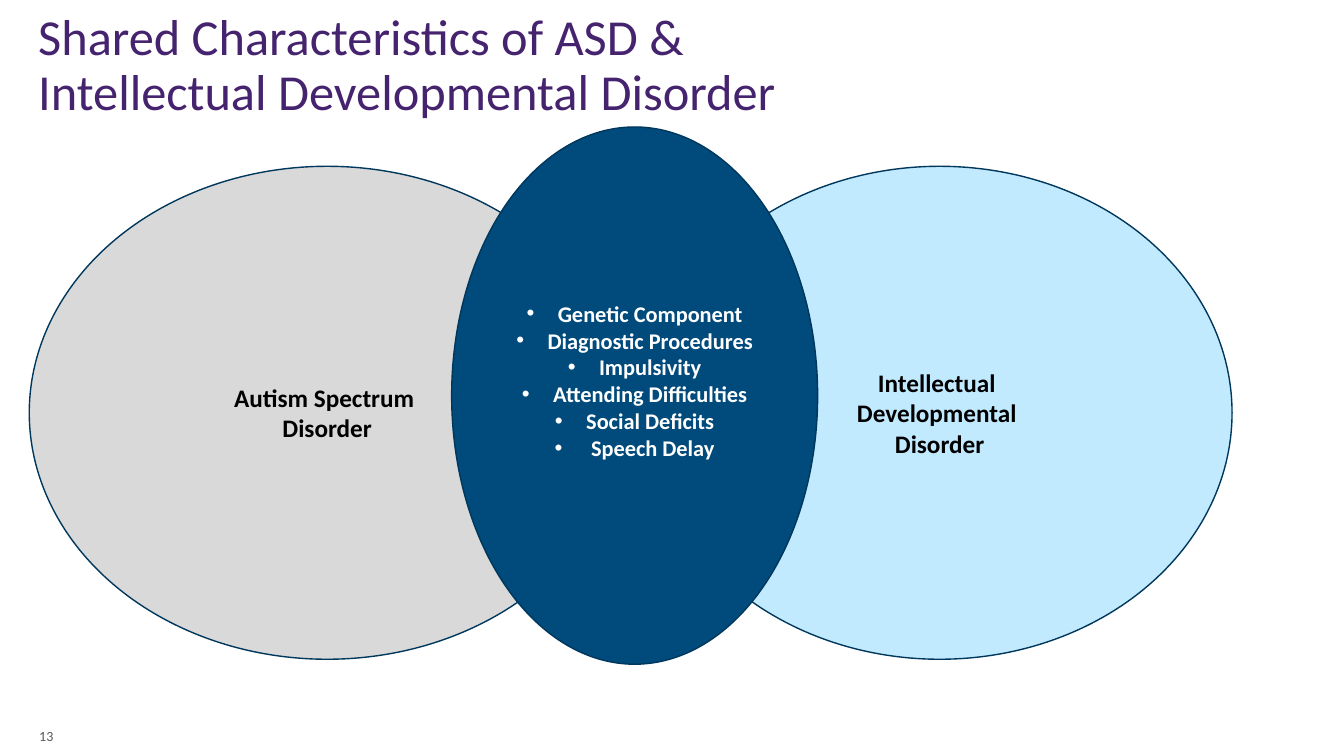
from dataclasses import dataclass

from lxml.etree import SubElement
from pptx import Presentation
from pptx.dml.color import RGBColor
from pptx.enum.shapes import MSO_SHAPE as Preset
from pptx.enum.text import MSO_ANCHOR as Anchor, PP_ALIGN as Align
from pptx.oxml.ns import qn
from pptx.slide import Slide
from pptx.util import Emu, Pt

PX = 9144  # 100 px to the inch
FONT = "Calibri"

PURPLE = RGBColor(0x45, 0x23, 0x6E)
DARK_GRAY = RGBColor(0x59, 0x59, 0x59)
LIGHT_GRAY = RGBColor(0xD9, 0xD9, 0xD9)
LIGHT_BLUE = RGBColor(0xC2, 0xEA, 0xFF)
DEEP_BLUE = RGBColor(0x00, 0x4A, 0x7C)
OUTLINE = RGBColor(0x00, 0x37, 0x5C)
BLACK = RGBColor(0x00, 0x00, 0x00)
WHITE = RGBColor(0xFF, 0xFF, 0xFF)


def px(length: int) -> Emu:
    return Emu(length * PX)


@dataclass(frozen=True)
class Box:
    left: int
    top: int
    width: int
    height: int

    def emu(self) -> tuple[Emu, Emu, Emu, Emu]:
        return px(self.left), px(self.top), px(self.width), px(self.height)


@dataclass(frozen=True)
class Label:
    box: Box
    text: str
    size: int
    color: RGBColor
    anchor: Anchor
    line_spacing: float = 1.0


@dataclass(frozen=True)
class Oval:
    box: Box
    fill: RGBColor
    lines: tuple[str, ...]
    size: int
    color: RGBColor
    bulleted: bool = False
    bottom_inset: int = 5


LABELS = (
    Label(Box(28, 7, 792, 118),
          "Shared Characteristics of ASD & Intellectual Developmental Disorder",
          36, PURPLE, Anchor.MIDDLE, 0.9),
    Label(Box(29, 703, 59, 40), "13", 10, DARK_GRAY, Anchor.BOTTOM),
)

OVALS = (
    Oval(Box(29, 165, 591, 489), LIGHT_GRAY,
         ("Autism Spectrum ", "Disorder"), 18, BLACK),
    Oval(Box(642, 165, 580, 489), LIGHT_BLUE,
         ("Intellectual ", "Developmental ", "Disorder"), 18, BLACK),
    Oval(Box(448, 126, 363, 533), DEEP_BLUE,
         ("Genetic Component", "Diagnostic Procedures", "Impulsivity",
          "Attending Difficulties", "Social Deficits", " Speech Delay"),
         16, WHITE, bulleted=True, bottom_inset=35),
)


def add_bullet(paragraph) -> None:
    properties = paragraph._p.get_or_add_pPr()
    properties.set("marL", str(px(31)))
    properties.set("indent", str(px(-31)))
    SubElement(properties, qn("a:buFont"), typeface="Arial")
    SubElement(properties, qn("a:buChar"), char="•")


def set_font(paragraph, size: int, color: RGBColor, bold: bool) -> None:
    paragraph.font.name = FONT
    paragraph.font.size = Pt(size)
    paragraph.font.bold = bold
    paragraph.font.color.rgb = color


def draw_label(slide: Slide, label: Label) -> None:
    frame = slide.shapes.add_textbox(*label.box.emu()).text_frame
    frame.word_wrap = True
    frame.vertical_anchor = label.anchor
    paragraph = frame.paragraphs[0]
    paragraph.text = label.text
    paragraph.line_spacing = label.line_spacing
    set_font(paragraph, label.size, label.color, bold=False)


def draw_oval(slide: Slide, oval: Oval) -> None:
    ellipse = slide.shapes.add_shape(Preset.OVAL, *oval.box.emu())
    ellipse.shadow.inherit = False
    ellipse.fill.solid()
    ellipse.fill.fore_color.rgb = oval.fill
    ellipse.line.color.rgb = OUTLINE
    ellipse.line.width = Pt(1)

    frame = ellipse.text_frame
    frame.word_wrap = True
    frame.vertical_anchor = Anchor.MIDDLE
    frame.margin_bottom = px(oval.bottom_inset)
    for index, line in enumerate(oval.lines):
        paragraph = frame.add_paragraph() if index else frame.paragraphs[0]
        paragraph.text = line
        paragraph.alignment = Align.CENTER
        if oval.bulleted:
            add_bullet(paragraph)
        set_font(paragraph, oval.size, oval.color, bold=True)


def main() -> None:
    deck = Presentation()
    deck.slide_width, deck.slide_height = px(1333), px(750)
    slide = deck.slides.add_slide(deck.slide_layouts[6])

    # Title and page number
    for label in LABELS:
        draw_label(slide, label)

    # Two disorders, with their shared traits on top
    for oval in OVALS:
        draw_oval(slide, oval)

    deck.save("out.pptx")


if __name__ == "__main__":
    main()
